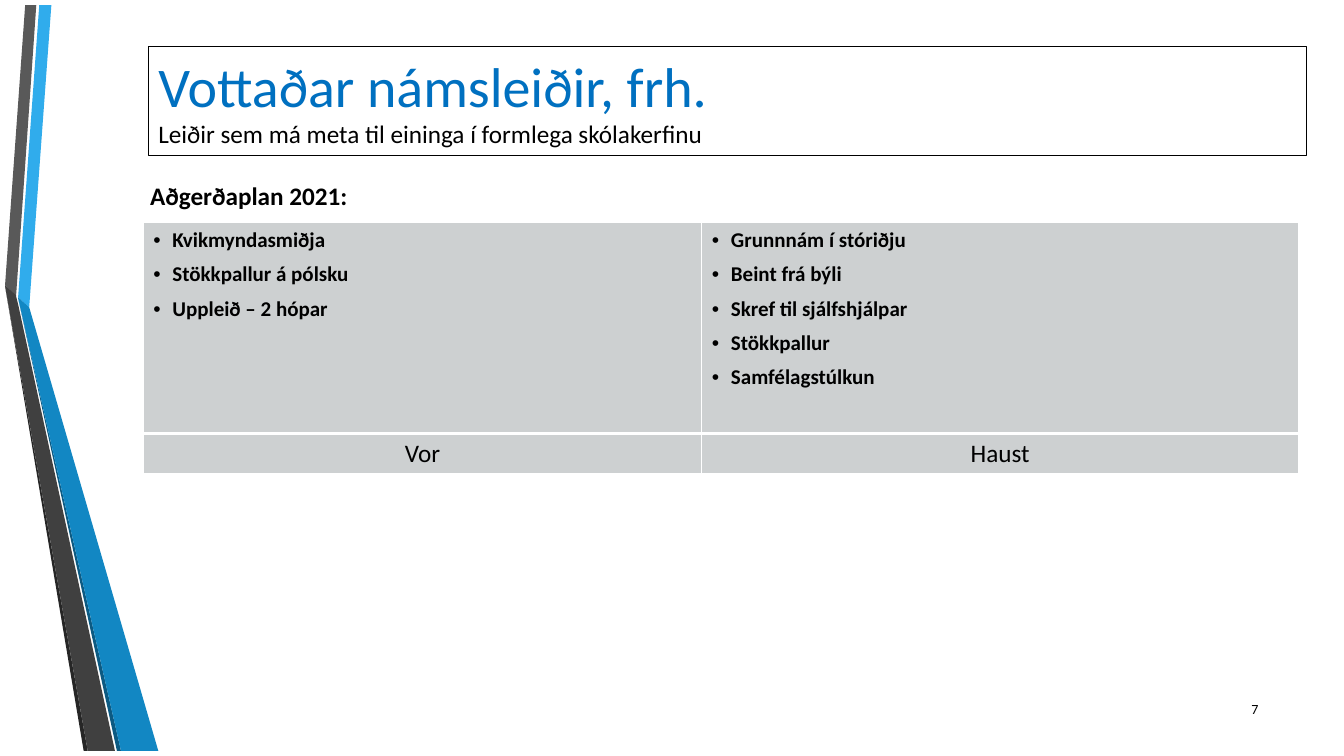
from dataclasses import dataclass

from lxml import etree
from pptx import Presentation
from pptx.dml.color import RGBColor
from pptx.enum.text import MSO_ANCHOR, MSO_AUTO_SIZE, PP_ALIGN
from pptx.oxml.ns import qn
from pptx.util import Inches, Pt

LEFT, CENTER, RIGHT = PP_ALIGN.LEFT, PP_ALIGN.CENTER, PP_ALIGN.RIGHT
TOP, MIDDLE = MSO_ANCHOR.TOP, MSO_ANCHOR.MIDDLE
NO_AUTOFIT = MSO_AUTO_SIZE.NONE


@dataclass(frozen=True)
class Theme:
    font: str = "Calibri"
    title_color: str = "0070C0"
    text_color: str = "000000"
    cell_fill: str = "CDD0D1"
    border: str = "FFFFFF"
    title_size: int = 40
    body_size: int = 18
    bullet_size: int = 15
    number_size: int = 10


@dataclass(frozen=True)
class Ribbon:
    color: str
    points: tuple[tuple[float, float], ...]


@dataclass(frozen=True)
class Season:
    name: str
    width: float
    courses: tuple[str, ...]


THEME = Theme()

RIBBONS = (
    Ribbon("30ACEC", ((0.18, 2.95), (0.29, 3.05), (0.51, 0.05), (0.39, 0.05))),
    Ribbon("595959", ((0.16, 2.93), (0.36, 0.05), (0.25, 0.05), (0.05, 2.83), (0.15, 2.93))),
    Ribbon("262626", ((0.05, 2.84), (0.83, 7.45), (0.87, 7.45))),
    Ribbon("0C5A82", ((1.2, 7.45), (0.18, 2.96), (1.16, 7.45))),
    Ribbon("1287C3", ((0.18, 2.95), (0.18, 2.96), (1.2, 7.45), (1.57, 7.45), (0.29, 3.05))),
    Ribbon("404040", ((1.14, 7.45), (0.18, 3.02), (0.16, 2.94), (0.16, 2.93),
                      (0.05, 2.83), (0.05, 2.84), (0.87, 7.45))),
)

SEASONS = (
    Season("Vor", 5.54, ("Kvikmyndasmiðja", "Stökkpallur á pólsku", "Uppleið – 2 hópar")),
    Season("Haust", 5.92, ("Grunnnám í stóriðju", "Beint frá býli", "Skref til sjálfshjálpar",
                           "Stökkpallur", "Samfélagstúlkun")),
)


def write_text(paragraph, text: str, *, size: int = THEME.body_size,
               color: str = THEME.text_color, bold: bool = False,
               align=LEFT, bullet: bool = False) -> None:
    if bullet:
        properties = paragraph._p.get_or_add_pPr()
        properties.set("marL", str(Inches(0.19)))
        properties.set("indent", str(-Inches(0.19)))
        etree.SubElement(properties, qn("a:buFont"), typeface="Arial")
        etree.SubElement(properties, qn("a:buChar"), char="•")
        paragraph.space_after = Pt(6)
    paragraph.alignment = align
    run = paragraph.add_run()
    run.text = text
    run.font.name = THEME.font
    run.font.size = Pt(size)
    run.font.bold = bold
    run.font.color.rgb = RGBColor.from_string(color)


def draw_ribbon(slide, ribbon: Ribbon) -> None:
    start, *others = [(Inches(x), Inches(y)) for x, y in ribbon.points]
    builder = slide.shapes.build_freeform(*start)
    builder.add_line_segments(others, close=True)
    shape = builder.convert_to_shape()
    shape.shadow.inherit = False
    shape.fill.solid()
    shape.fill.fore_color.rgb = RGBColor.from_string(ribbon.color)
    shape.line.fill.background()


def draw_title(slide) -> None:
    title = slide.shapes.title
    title.left, title.top = Inches(1.47), Inches(0.46)
    title.width, title.height = Inches(11.49), Inches(1.08)
    title.line.color.rgb = RGBColor.from_string(THEME.text_color)
    title.line.width = Pt(0.75)
    frame = title.text_frame
    frame.auto_size = NO_AUTOFIT
    frame.vertical_anchor = TOP
    write_text(frame.paragraphs[0], "Vottaðar námsleiðir, frh.",
               size=THEME.title_size, color=THEME.title_color)
    write_text(frame.add_paragraph(), "Leiðir sem má meta til eininga í formlega skólakerfinu")


def draw_label(slide, text: str, left: float, top: float, width: float, height: float,
               anchor=TOP, **text_format) -> None:
    box = slide.shapes.add_textbox(Inches(left), Inches(top), Inches(width), Inches(height))
    box.text_frame.word_wrap = True
    box.text_frame.vertical_anchor = anchor
    write_text(box.text_frame.paragraphs[0], text, **text_format)


def format_cell(cell, top: int, bottom: int) -> None:
    cell.fill.solid()
    cell.fill.fore_color.rgb = RGBColor.from_string(THEME.cell_fill)
    properties = cell._tc.get_or_add_tcPr()
    borders = (("a:lnL", 1), ("a:lnR", 1), ("a:lnT", top), ("a:lnB", bottom))
    for position, (tag, width) in enumerate(borders):
        line = etree.Element(qn(tag), w=str(Pt(width)))
        fill = etree.SubElement(line, qn("a:solidFill"))
        etree.SubElement(fill, qn("a:srgbClr"), val=THEME.border)
        properties.insert(position, line)


def draw_seasons(slide) -> None:
    frame = slide.shapes.add_table(2, len(SEASONS), Inches(1.42), Inches(2.21),
                                   Inches(11.46), Inches(2.47))
    table = frame.table
    table.first_row = False
    table.horz_banding = False
    table.rows[0].height = Inches(2.09)
    table.rows[1].height = Inches(0.38)
    for index, season in enumerate(SEASONS):
        table.columns[index].width = Inches(season.width)
        courses, name = table.cell(0, index), table.cell(1, index)
        format_cell(courses, top=1, bottom=3)
        format_cell(name, top=3, bottom=1)
        for order, course in enumerate(season.courses):
            text_frame = courses.text_frame
            paragraph = text_frame.add_paragraph() if order else text_frame.paragraphs[0]
            write_text(paragraph, course, size=THEME.bullet_size, bold=True, bullet=True)
        write_text(name.text_frame.paragraphs[0], season.name, align=CENTER)


def main() -> None:
    presentation = Presentation()
    presentation.slide_width = Inches(13.33)
    presentation.slide_height = Inches(7.5)
    slide = presentation.slides.add_slide(presentation.slide_layouts[5])
    for ribbon in RIBBONS:
        draw_ribbon(slide, ribbon)
    draw_title(slide)
    draw_label(slide, "7", 11.98, 6.83, 0.6, 0.4, anchor=MIDDLE,
               size=THEME.number_size, align=RIGHT)
    draw_label(slide, "Aðgerðaplan 2021:", 1.39, 1.74, 11.28, 0.4, bold=True)
    draw_seasons(slide)
    presentation.save("out.pptx")


if __name__ == "__main__":
    main()
